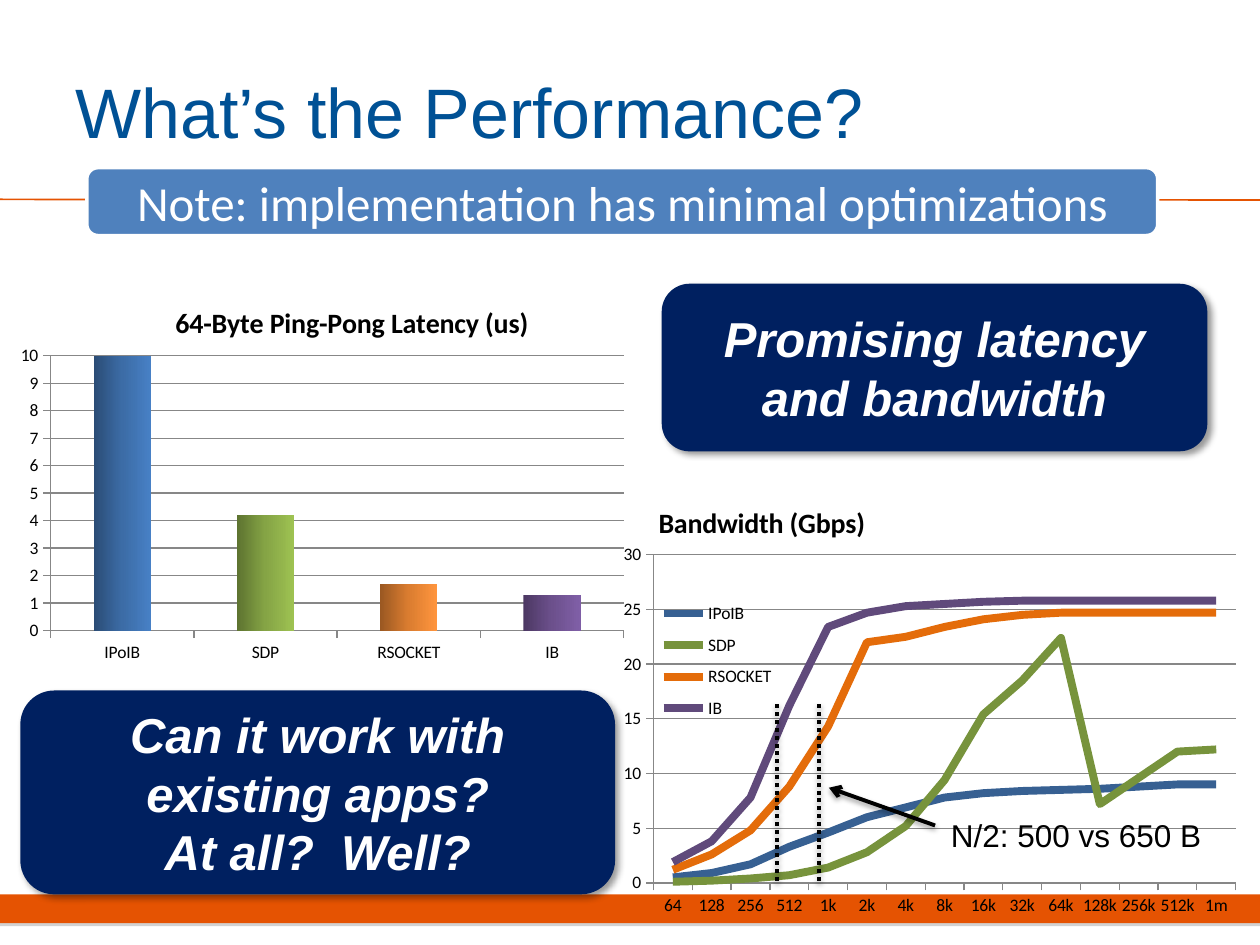
from copy import deepcopy

from lxml import etree
from pptx import Presentation
from pptx import util as u
from pptx.chart.data import CategoryChartData
from pptx.dml.color import RGBColor
from pptx.enum import chart as charts, dml, shapes, text
from pptx.oxml.ns import qn

BLACK, WHITE, NAVY, ORANGE, BLUE = "000000", "FFFFFF", "002060", "E55302", "4F81BD"
PANEL_SHADOW = ("000000", 40, 4, 3, 45)
LINE_SHADOW = ("000000", 38, 3.1, 1.6, 90)
LATENCY = {"IPoIB": 19.6, "SDP": 4.2, "RSOCKET": 1.7, "IB": 1.3}
BAR_GRADIENTS = [
    ("2A4C75", "3C6CA6", "4780C5"),
    ("5D7330", "85A445", "9EC252"),
    ("9A5822", "DB7D30", "FF953E"),
    ("4C3863", "6C508C", "805FA7"),
]
SIZES = ["64", "128", "256", "512", "1k", "2k", "4k", "8k", "16k", "32k",
         "64k", "128k", "256k", "512k", "1m"]
BANDWIDTH = {
    "IPoIB": ("376092", [0.5, 0.9, 1.7, 3.3, 4.6, 6, 6.9, 7.8, 8.2, 8.4, 8.5, 8.6, 8.8, 9, 9]),
    "SDP": ("77933C", [0.1, 0.2, 0.4, 0.7, 1.4, 2.8, 5.2, 9.4, 15.4, 18.5, 22.4, 7.2, 9.6, 12, 12.2]),
    "RSOCKET": ("E46C0A", [1.2, 2.6, 4.8, 8.8, 14.3, 22, 22.5, 23.4, 24.1, 24.5] + [24.7] * 5),
    "IB": ("604A7B", [1.9, 3.8, 7.8, 16.2, 23.4, 24.7, 25.3, 25.5, 25.7] + [25.8] * 6),
}


def rgb(value):
    """Turn a hex string into a colour."""
    return RGBColor.from_string(value)


def cm(*lengths):
    """Turn centimetre numbers into lengths."""
    return [u.Cm(length) for length in lengths]


def set_shadow(shape, shadow=None):
    """Give a finished shape an outer shadow, or none at all."""
    effects = etree.SubElement(shape._element.spPr, qn("a:effectLst"))
    if shadow:
        color, alpha, blur, distance, angle = shadow
        outer = etree.SubElement(effects, qn("a:outerShdw"), blurRad=str(u.Pt(blur)),
                                 dist=str(u.Pt(distance)), dir=str(angle * 60000),
                                 algn="ctr", rotWithShape="0")
        tone = etree.SubElement(outer, qn("a:srgbClr"), val=color)
        etree.SubElement(tone, qn("a:alpha"), val=str(alpha * 1000))


def add_block(parent, kind, place, fill, outline=None, shadow=None):
    """Draw a filled preset shape."""
    block = parent.add_shape(kind, *cm(*place))
    block.fill.solid()
    block.fill.fore_color.rgb = rgb(fill)
    if outline:
        block.line.color.rgb = rgb(outline)
        block.line.width = u.Pt(2)
    else:
        block.line.fill.background()
    set_shadow(block, shadow)
    return block


def write(shape, lines, size, color, font="Arial", align=text.PP_ALIGN.CENTER,
          anchor=text.MSO_ANCHOR.MIDDLE, strong=False):
    """Write lines, parted by line breaks, into one paragraph."""
    frame = shape.text_frame
    frame.word_wrap = True
    frame.vertical_anchor = anchor
    para = frame.paragraphs[0]
    para.alignment = align
    for index, line in enumerate(lines):
        if index:
            para.add_line_break()
        span = para.add_run()
        span.text = line
        span.font.name, span.font.size = font, u.Pt(size)
        span.font.bold = span.font.italic = strong
        span.font.color.rgb = rgb(color)


def add_panel(page, place, lines):
    """Draw a navy callout with its message."""
    panel = add_block(page.shapes, shapes.MSO_SHAPE.ROUNDED_RECTANGLE, place, NAVY,
                      shadow=PANEL_SHADOW)
    write(panel, lines, 28, WHITE, strong=True)


def add_line(parent, ends, color, width, shadow=None, dotted=False, arrow=False):
    """Draw a straight line between two points."""
    line = parent.add_connector(shapes.MSO_CONNECTOR.STRAIGHT, *cm(*ends))
    line.line.color.rgb = rgb(color)
    line.line.width = u.Pt(width)
    if dotted:
        line.line.dash_style = dml.MSO_LINE.ROUND_DOT
    if arrow:
        etree.SubElement(line.line._get_or_add_ln(), qn("a:tailEnd"), type="arrow")
    set_shadow(line, shadow)


def set_layout(part, x, y, w=None, h=None):
    """Place a chart part by fractions of the chart area."""
    for old in part.findall(qn("c:layout")):
        part.remove(old)
    layout = etree.Element(qn("c:layout"))
    manual = etree.SubElement(layout, qn("c:manualLayout"))
    values = {"xMode": "edge", "yMode": "edge", "x": x, "y": y, "w": w, "h": h}
    if part.tag == qn("c:plotArea"):
        values = {"layoutTarget": "inner", **values}
    for name, value in values.items():
        if value is not None:
            etree.SubElement(manual, qn("c:" + name), val=str(value))
    overlay = part.find(qn("c:overlay"))
    if overlay is None:
        part.insert(0, layout)
    else:
        overlay.addprevious(layout)
        overlay.set("val", "1")


def add_graph(page, kind, place, title, title_at, plot_at, categories, series, top):
    """Add a chart with the common fonts, axes and title."""
    data = CategoryChartData()
    data.categories = categories
    for name, values in series.items():
        data.add_series(name, values)
    graph = page.shapes.add_chart(kind, *cm(*place), data).chart
    graph.font.name, graph.font.size = "Calibri", u.Pt(10)
    graph.font.color.rgb = rgb(BLACK)
    graph.has_legend = False
    graph.has_title = True
    span = graph.chart_title.text_frame.paragraphs[0].add_run()
    span.text = title
    span.font.name, span.font.size, span.font.bold = "Calibri", u.Pt(16), True
    span.font.color.rgb = rgb(BLACK)
    set_layout(graph.chart_title._element, *title_at)
    set_layout(graph._chartSpace.chart.plotArea, *plot_at)
    values = graph.value_axis
    values.minimum_scale, values.maximum_scale = 0, top
    values.major_unit = top / len(range(0, top, 1 if top == 10 else 5))
    values.has_major_gridlines = True
    for part in (values, graph.category_axis, values.major_gridlines):
        part.format.line.color.rgb = rgb("878787")
    for axis in (values, graph.category_axis):
        axis.major_tick_mark = charts.XL_TICK_MARK.OUTSIDE
    graph.plots[0].vary_by_categories = False
    return graph


def fill_gradient(fill, colors):
    """Fill from left to right with evenly spaced colours."""
    fill.gradient()
    fill.gradient_angle = 0
    stops = fill._xPr.find(".//" + qn("a:gsLst"))
    while len(stops) < len(colors):
        stops.append(deepcopy(stops[0]))
    for index, (stop, color) in enumerate(zip(fill.gradient_stops, colors)):
        stop.position = index / (len(colors) - 1)
        stop.color.rgb = rgb(color)


def add_latency_chart(page):
    """Add the column chart of latencies."""
    graph = add_graph(page, charts.XL_CHART_TYPE.COLUMN_CLUSTERED, (0.13, 5.38, 12.7, 8.15),
                      "64-Byte Ping-Pong Latency (us)", (0.26, 0.08), (0.07, 0.22, 0.91, 0.68),
                      list(LATENCY), {"Series 1": list(LATENCY.values())}, 10)
    graph.plots[0].gap_width = 150
    bars = graph.plots[0].series[0]
    bars.format.fill.solid()
    bars.format.fill.fore_color.rgb = rgb(BLUE)
    for index, colors in enumerate(BAR_GRADIENTS):
        fill_gradient(bars.points[index].format.fill, colors)


def add_bandwidth_chart(page):
    """Add the line chart of bandwidths."""
    graph = add_graph(page, charts.XL_CHART_TYPE.LINE, (12.27, 9.32, 12.9, 9.32),
                      "Bandwidth (Gbps)", (0.07, 0.08), (0.07, 0.2, 0.91, 0.71),
                      SIZES, {name: values for name, (_, values) in BANDWIDTH.items()}, 30)
    graph.has_legend = True
    graph.legend.position = charts.XL_LEGEND_POSITION.LEFT
    graph.legend.include_in_layout = False
    set_layout(graph.legend._element, 0.08, 0.28, 0.18, 0.3)
    for series, (color, _) in zip(graph.plots[0].series, BANDWIDTH.values()):
        series.smooth = False
        series.marker.style = charts.XL_MARKER_STYLE.NONE
        series.format.line.color.rgb = rgb(color)
        series.format.line.width = u.Pt(4.5)


def main():
    """Build the slide and save it."""
    deck = Presentation()
    deck.slide_width, deck.slide_height = cm(25.4, 19.05)
    page = deck.slides.add_slide(deck.slide_layouts[6])
    add_block(page.shapes, shapes.MSO_SHAPE.RECTANGLE, (0, 18.03, 25.4, 0.58), ORANGE,
              shadow=("808080", 35, 0, 1.8, 90))
    add_line(page.shapes, (0, 4.02, 25.4, 4.03), ORANGE, 1)
    title = page.shapes.add_textbox(*cm(1.27, 0.64, 20.75, 3.18))
    write(title, ["What’s the Performance?"], 40, "005195", align=text.PP_ALIGN.LEFT)
    add_panel(page, (13.34, 5.72, 11, 3.38), ["Promising latency and bandwidth"])
    add_panel(page, (0.41, 13.92, 11.99, 4.11),
              ["Can it work with existing apps?", "At all?  Well?"])
    add_latency_chart(page)
    add_bandwidth_chart(page)

    marks = page.shapes.add_group_shape().shapes
    for x in (16.51, 15.67):
        add_line(marks, (x, 14.2, x, 17.78), BLACK, 2.25, LINE_SHADOW, dotted=True)
    label = marks.add_textbox(*cm(18.62, 16.33, 6.15, 1.02))
    write(label, ["N/2: 500 vs 650 B"], 18, BLACK, anchor=text.MSO_ANCHOR.TOP)
    add_line(marks, (18.85, 16.64, 16.71, 15.88), BLACK, 2.25, LINE_SHADOW, arrow=True)

    banner = page.shapes.add_group_shape().shapes
    add_block(banner, shapes.MSO_SHAPE.ROUNDED_RECTANGLE, (1.75, 3.38, 21.59, 1.37), BLUE, WHITE)
    note = banner.add_textbox(*cm(1.85, 3.45, 21.39, 1.24))
    write(note, ["Note: implementation has minimal optimizations"], 28, WHITE, "Calibri")
    deck.save("out.pptx")


if __name__ == "__main__":
    main()
